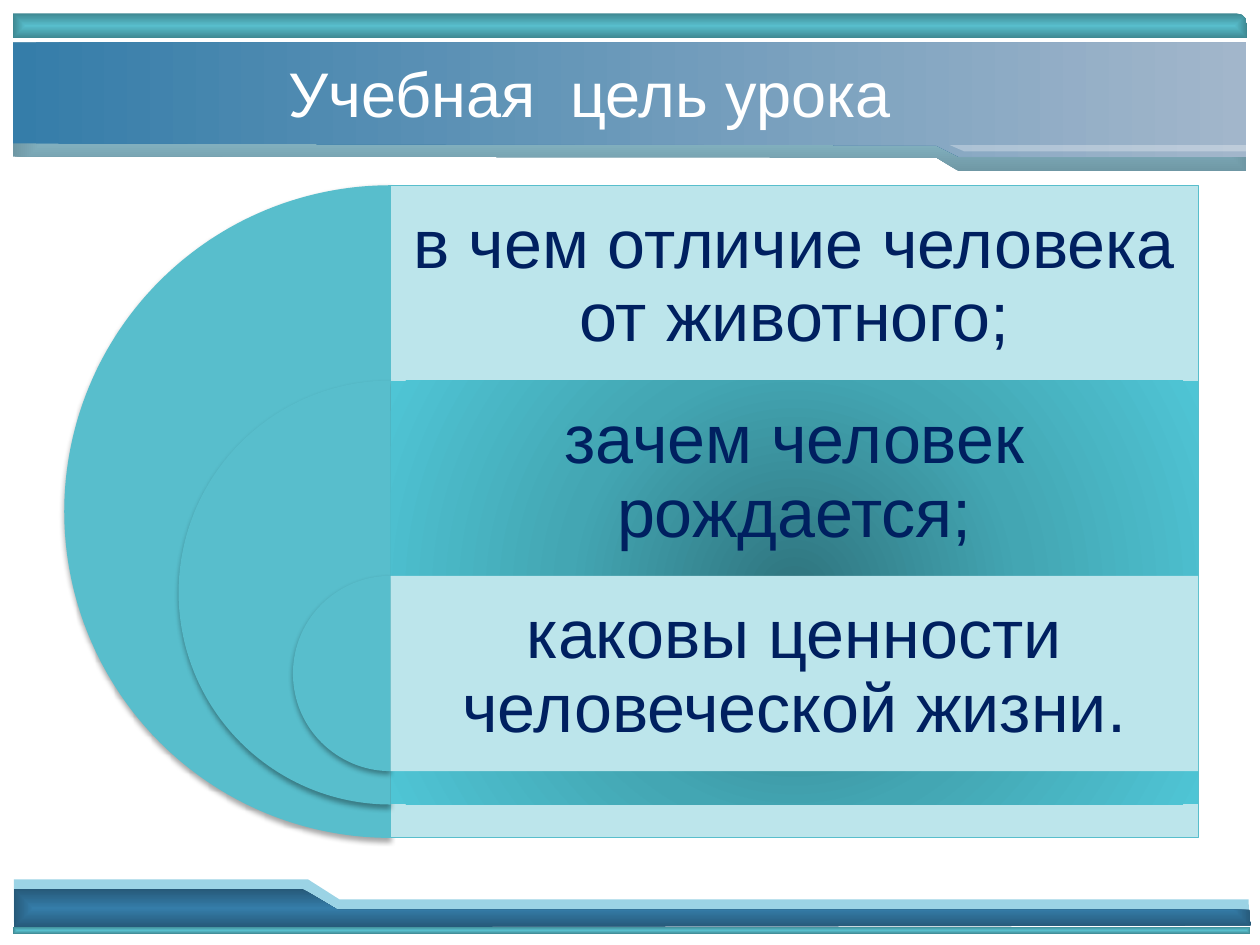
from lxml.etree import SubElement
from pptx import Presentation
from pptx.dml.color import RGBColor
from pptx.enum.shapes import MSO_SHAPE
from pptx.enum.text import MSO_ANCHOR, PP_ALIGN
from pptx.oxml.ns import qn
from pptx.util import Pt

HUES = {
    "white": "FFFFFF", "navy": "002060", "black": "000000",
    "teal": "58BECC", "moss": "3F8892", "pale": "BCE5EB",
    "sky": "9BD3E5", "slate": "6F97A4", "blue": "357DA9",
    "deep": "265979", "mist": "A2B6CB", "dark": "2F747E",
    "mid": "43A6B3", "light": "4FC5D5",
}
GOALS = [
    "в чем отличие человека от животного;",
    "зачем человек рождается;",
    "каковы ценности человеческой жизни.",
]
LEFT, TOP, WIDE, STEP = 223.2, 105.84, 461.52, 111.6
SIZES = [372.96, 242.28, 111.6]


def rgb(hue):
    return RGBColor.from_string(HUES[hue])


def add_hue(node, hue, alpha=100):
    clr = SubElement(node, qn("a:srgbClr"), val=HUES[hue])
    if alpha < 100:
        SubElement(clr, qn("a:alpha"), val=str(alpha * 1000))


def blend(shape, hues, kind):
    shape.fill.gradient()
    grad = shape._element.spPr.find(qn("a:gradFill"))
    for node in list(grad):
        grad.remove(node)
    stops = SubElement(grad, qn("a:gsLst"))
    for i, hue in enumerate(hues):
        pos = 100000 * i // (len(hues) - 1)
        add_hue(SubElement(stops, qn("a:gs"), pos=str(pos)), hue)
    if kind == "lin":
        SubElement(grad, qn("a:lin"), ang="0", scaled="0")
    else:
        way = SubElement(grad, qn("a:path"), path=kind)
        SubElement(way, qn("a:fillToRect"), l="50000", t="50000", r="50000", b="50000")


def paint(shape, hues, kind="rect", alpha=100, edge=None):
    if len(hues) > 1:
        blend(shape, hues, kind)
    else:
        shape.fill.solid()
        shape.fill.fore_color.rgb = rgb(hues[0])
        if alpha < 100:
            clr = shape._element.spPr.find(qn("a:solidFill"))[0]
            SubElement(clr, qn("a:alpha"), val=str(alpha * 1000))
    if edge:
        shape.line.color.rgb = rgb(edge)
        shape.line.width = Pt(0.75)
    else:
        shape.line.fill.background()
    shape.shadow.inherit = False
    return shape


def add_form(slide, dots, *hues, **look):
    dots = [(Pt(x), Pt(y)) for x, y in dots]
    form = slide.shapes.build_freeform(*dots[0], scale=1.0)
    form.add_line_segments(dots[1:], close=True)
    return paint(form.convert_to_shape(), hues, **look)


def add_box(slide, preset, box, *hues, **look):
    shape = slide.shapes.add_shape(preset, *map(Pt, box))
    return paint(shape, hues, **look)


def add_pie(slide, box):
    pie = add_box(slide, MSO_SHAPE.PIE, box, "teal")
    pie.adjustments[0] = 54
    pie.adjustments[1] = 162
    glow = pie._element.spPr.find(qn("a:effectLst"))
    shade = SubElement(glow, qn("a:outerShdw"), blurRad=str(Pt(3.1)),
                       dist=str(Pt(1.8)), dir="5400000", rotWithShape="0")
    add_hue(shade, "black", 35)


def add_text(slide, text, box, size=36, hue="white", pad=(7.2, 3.6), space=1.0):
    frame = slide.shapes.add_textbox(*map(Pt, box)).text_frame
    frame.word_wrap = True
    frame.vertical_anchor = MSO_ANCHOR.MIDDLE
    frame.margin_left = frame.margin_right = Pt(pad[0])
    frame.margin_top = frame.margin_bottom = Pt(pad[1])
    para = frame.paragraphs[0]
    para.alignment = PP_ALIGN.CENTER
    para.line_spacing = space
    run = para.add_run()
    run.text = text
    run.font.name = "Arial"
    run.font.size = Pt(size)
    run.font.color.rgb = rgb(hue)


def add_frame(slide):
    add_form(slide, [(8, 527), (714, 527), (713.5, 514), (194, 514),
                     (176, 502.5), (8, 502.5)], "sky")
    add_form(slide, [(8, 530), (715, 529), (714, 520), (193, 520),
                     (173, 508), (8, 508)], "blue", "deep")
    bar = add_box(slide, MSO_SHAPE.ROUND_1_RECTANGLE, (7.5, 7.75, 705, 14),
                  "teal", "moss")
    bar.adjustments[0] = 0.4
    add_form(slide, [(712, 24.3), (7.5, 24.3), (7.5, 89.5), (535, 90),
                     (548, 98), (712, 98)], "sky", "slate")
    add_form(slide, [(712, 24.3), (7.5, 24.3), (7.5, 82), (535, 83),
                     (548, 89.5), (712, 90)], "blue", "mist", kind="lin")
    add_box(slide, MSO_SHAPE.RECTANGLE, (7.5, 529.5, 707, 4.3), "teal", "moss")
    add_form(slide, [(543, 83), (712.5, 83), (712.5, 86.5), (551, 86.5)],
             "white", alpha=30)


def add_goals(slide):
    looks = [
        (["pale"], {"edge": "teal"}),
        (["dark", "mid", "light"], {"kind": "circle"}),
        (["pale"], {}),
    ]
    for i, (goal, size, (hues, look)) in enumerate(zip(GOALS, SIZES, looks)):
        top = TOP + i * STEP
        add_pie(slide, (LEFT - size / 2, top, size, size))
        add_box(slide, MSO_SHAPE.RECTANGLE, (LEFT, top, WIDE, size), *hues, **look)
        add_text(slide, goal, (LEFT, top, WIDE, STEP), size=39, hue="navy",
                 pad=(11.5, 11.5), space=0.9)


def main():
    deck = Presentation()
    deck.slide_width, deck.slide_height = Pt(720), Pt(540)
    slide = deck.slides.add_slide(deck.slide_layouts[6])
    add_frame(slide)
    add_text(slide, "Учебная  цель урока", (36, 18.7, 602, 68.4))
    add_goals(slide)
    deck.save("out.pptx")


if __name__ == "__main__":
    main()
